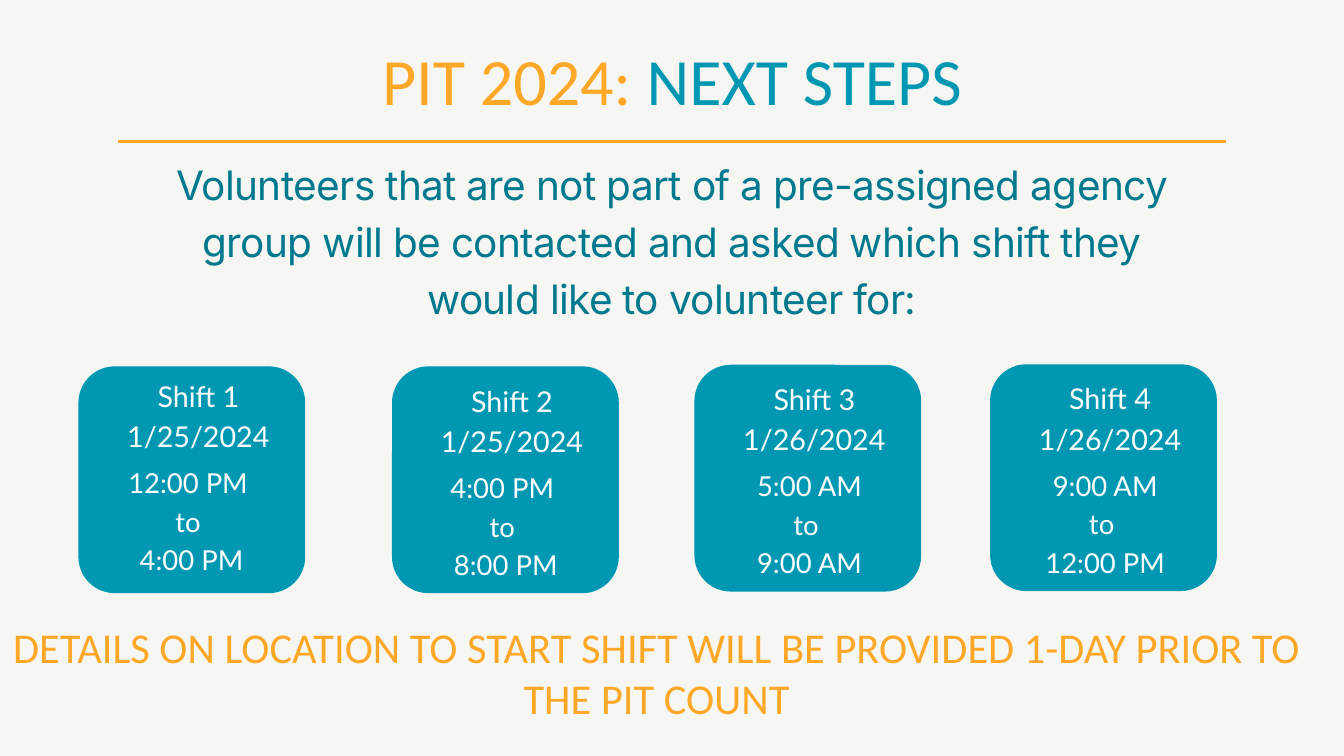
from pptx import Presentation
from pptx.dml.color import RGBColor
from pptx.enum.shapes import MSO_CONNECTOR, MSO_SHAPE
from pptx.enum.text import MSO_ANCHOR, PP_ALIGN
from pptx.oxml.ns import qn
from pptx.util import Pt
from lxml import etree

STRAIGHT = MSO_CONNECTOR.STRAIGHT
ROUNDED = MSO_SHAPE.ROUNDED_RECTANGLE
TOP = MSO_ANCHOR.TOP
CENTER = PP_ALIGN.CENTER

COLORS = {
    "paper": "F6F6F3",
    "gold": "FFA828",
    "teal": "0097B2",
    "deep": "00788D",
    "white": "FFFFFF",
}
CARD = 243
HEAD_W, HEAD_H = 166, 84
TIME_W, TIME_H = 140, 120


class Deck:
    def __init__(self, width, height):
        self.prs = Presentation()
        self.prs.slide_width = Pt(width)
        self.prs.slide_height = Pt(height)
        self.slide = self.prs.slides.add_slide(self.prs.slide_layouts[5])
        fill = self.slide.background.fill
        fill.solid()
        fill.fore_color.rgb = self.color("paper")

    def color(self, name):
        return RGBColor.from_string(COLORS[name])

    def put(self, shape, lines, size, font, pitch, space=0):
        """Each line is a list of (text, color) runs."""
        frame = shape.text_frame
        frame.word_wrap = True
        frame.vertical_anchor = TOP
        frame.margin_left = frame.margin_right = 0
        frame.margin_top = frame.margin_bottom = 0
        for i, line in enumerate(lines):
            para = frame.add_paragraph() if i else frame.paragraphs[0]
            para.alignment = CENTER
            para.line_spacing = Pt(pitch)
            for text, color in line:
                run = para.add_run()
                run.text = text
                run.font.size = Pt(size)
                run.font.name = font
                run.font.color.rgb = self.color(color)
                if space:
                    run._r.get_or_add_rPr().set("spc", str(space))

    def title(self, box, runs, size, font, pitch):
        shape = self.slide.shapes.title
        shape.left, shape.top, shape.width, shape.height = map(Pt, box)
        self.put(shape, [runs], size, font, pitch)

    def text(self, box, lines, color, size, font, pitch, space=0):
        shape = self.slide.shapes.add_textbox(*map(Pt, box))
        runs = [[(line, color)] for line in lines]
        self.put(shape, runs, size, font, pitch, space)

    def rule(self, left, right, y, color, weight):
        line = self.slide.shapes.add_connector(
            STRAIGHT, Pt(left), Pt(y), Pt(right), Pt(y))
        line.line.color.rgb = self.color(color)
        line.line.width = Pt(weight)
        etree.SubElement(line._element.spPr, qn("a:effectLst"))

    def card(self, left, top, color):
        shape = self.slide.shapes.add_shape(
            ROUNDED, Pt(left), Pt(top), Pt(CARD), Pt(CARD))
        shape.adjustments[0] = 0.16
        shape.shadow.inherit = False
        shape.fill.solid()
        shape.fill.fore_color.rgb = self.color(color)
        shape.line.fill.background()

    def shift(self, left, top, head, mid, name, day, start, end):
        self.card(left, top, "teal")
        self.text((left + 128.6 - HEAD_W / 2, head, HEAD_W, HEAD_H),
                  [name, day], "white", 30.7, "Lato", 43)
        self.text((left + mid - TIME_W / 2, head + 94.3, TIME_W, TIME_H),
                  [start, "to ", end], "white", 29.4, "Lato", 41.2)


def main():
    deck = Deck(1440, 810)

    # Heading
    deck.title((126, 42.5, 1188, 85),
               [("PIT 2024: ", "gold"), ("NEXT STEPS", "teal")],
               70.8, "Calibri", 84.9)
    deck.rule(126, 1314, 152, "gold", 3)

    # Introduction
    deck.text((174, 162.7, 1092, 178.6),
              ["Volunteers that are not part of a pre-assigned agency group "
               "will be contacted and asked which shift they would like to "
               "volunteer for:"],
              "deep", 43.4, "Inter", 60.8, -70)

    # Shifts: card left and top, text top, middle of times, wording
    shifts = [
        (84, 392.5, 399.6, 121.2, "1/25/2024", "12:00 PM ", "4:00 PM"),
        (420, 392.5, 404.6, 121.9, "1/25/2024", "4:00 PM ", "8:00 PM"),
        (744, 390.8, 402.5, 123.3, "1/26/2024", "5:00 AM", "9:00 AM"),
        (1060.8, 390.3, 402.3, 123.3, "1/26/2024", "9:00 AM", "12:00 PM"),
    ]
    for num, (left, top, head, mid, *words) in enumerate(shifts, 1):
        deck.shift(left, top, head, mid, f"Shift {num}", *words)

    # Closing note
    deck.text((0, 665.3, 1407, 108.7),
              ["DETAILS ON LOCATION TO START SHIFT WILL BE PROVIDED 1-DAY "
               "PRIOR TO THE PIT COUNT"],
              "gold", 45.5, "Calibri", 54.6)

    deck.prs.save("out.pptx")


if __name__ == "__main__":
    main()
